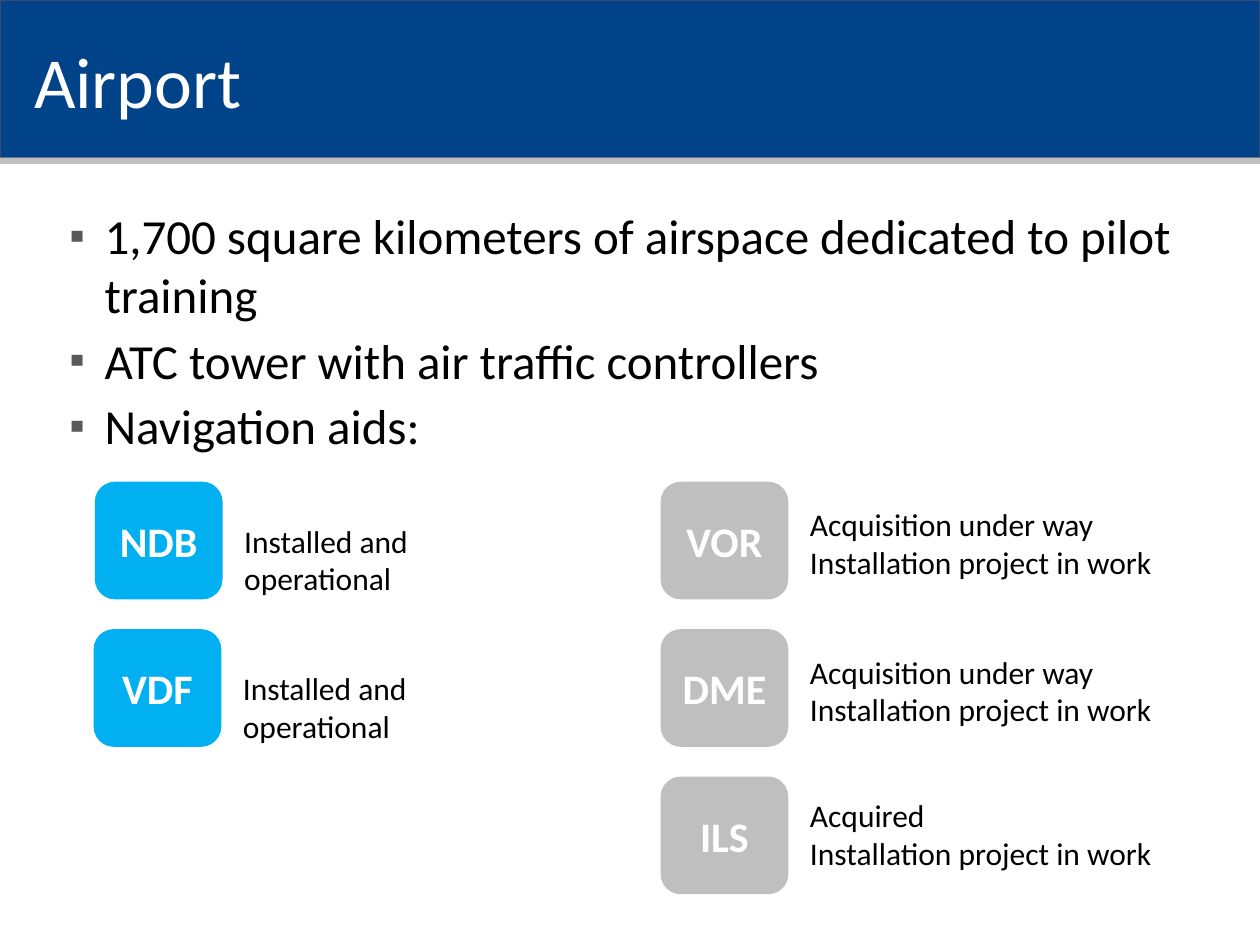
import pptx
import pptx.util
import pptx.dml.color
import pptx.enum.shapes
import pptx.enum.text
import pptx.oxml
import pptx.oxml.ns

Inches, Pt = pptx.util.Inches, pptx.util.Pt
MSO_SHAPE = pptx.enum.shapes.MSO_SHAPE
PP_ALIGN = pptx.enum.text.PP_ALIGN
MSO_ANCHOR = pptx.enum.text.MSO_ANCHOR
NAVY, GRAY, SKY, WHITE, BLACK = "004388", "BFBFBF", "00B0F0", "FFFFFF", "000000"
TILE_W, TILE_H, ROW_TOP, ROW_STEP = 1, 0.92, 3.83, 1.17


def rgb(value):
    """Return the colour for a hex string."""
    return pptx.dml.color.RGBColor.from_string(value)


def place(sp, x, y, w, h):
    """Move a shape to a box given in inches."""
    box = dict(left=x, top=y, width=w, height=h)
    for name, value in box.items():
        setattr(sp, name, Inches(value))


def write(sp, lines, size, color, bold=False, align=PP_ALIGN.LEFT, anchor=MSO_ANCHOR.TOP):
    """Fill a shape with one formatted paragraph per line."""
    tf = sp.text_frame
    frame = dict(word_wrap=True, auto_size=pptx.enum.text.MSO_AUTO_SIZE.NONE,
                 vertical_anchor=anchor, text="\n".join(lines))
    for name, value in frame.items():
        setattr(tf, name, value)
    for p in tf.paragraphs:
        p.alignment = align
        for r in p.runs:
            font = dict(name="Calibri", size=Pt(size), bold=bold)
            for name, value in font.items():
                setattr(r.font, name, value)
            r.font.color.rgb = rgb(color)


def add_block(s, kind, x, y, w, h, fill, line=None):
    """Add a flat filled shape with an optional outline."""
    sp = s.shapes.add_shape(kind, *map(Inches, (x, y, w, h)))
    sp.shadow.inherit = False
    sp.fill.solid()
    sp.fill.fore_color.rgb = rgb(fill)
    if line:
        sp.line.color.rgb = rgb(line)
        sp.line.width = Pt(1)
    else:
        sp.line.fill.background()
    return sp


def add_header(s, x, y, w, h, title):
    """Put the title on a coloured band with a thin rule below."""
    band = add_block(s, MSO_SHAPE.RECTANGLE, x, y, w, h, NAVY, "3F4774")
    rule = add_block(s, MSO_SHAPE.RECTANGLE, x, y + h, w, 0.05, GRAY)
    for i, sp in enumerate((band, rule)):
        s.shapes._spTree.insert(2 + i, sp._element)
    sp = s.shapes.title
    place(sp, x + 0.17, y + 0.17, w - 1, h - 0.33)
    write(sp, [title], 41, WHITE, anchor=MSO_ANCHOR.MIDDLE)


def add_bullets(s, x, y, w, h, lines):
    """Fill the body placeholder with square bullets."""
    sp = s.placeholders[1]
    place(sp, x, y, w, h)
    write(sp, lines, 28, BLACK)
    ns = pptx.oxml.ns.nsdecls("a")
    for i, p in enumerate(sp.text_frame.paragraphs):
        pPr = p._p.get_or_add_pPr()
        pPr.set("marL", str(Inches(0.4)))
        pPr.set("indent", str(Inches(-0.28)))
        for xml in (f'<a:buClr {ns}><a:srgbClr val="595959"/></a:buClr>',
                    f'<a:buSzPct {ns} val="90000"/>',
                    f'<a:buChar {ns} char="▪"/>'):
            pPr.append(pptx.oxml.parse_xml(xml))
        p.space_before = Pt(4 if i else 0)


def add_aid(s, x, y, fill, name, lines, label_dy, label_w):
    """Add a navigation aid tile with its status to the right."""
    sp = add_block(s, MSO_SHAPE.FLOWCHART_ALTERNATE_PROCESS, x, y, TILE_W, TILE_H, fill, fill)
    write(sp, [name], 24, WHITE, True, PP_ALIGN.CENTER, MSO_ANCHOR.MIDDLE)
    label = s.shapes.add_textbox(*map(Inches, (x + 1.08, y + label_dy, label_w, 0.71)))
    write(label, lines, 18, BLACK)


def add_aids(s, x, y, fill, label_w, aids):
    """Stack navigation aids in a column."""
    for i, (name, lines, dx, label_dy) in enumerate(aids):
        add_aid(s, x + dx, y + i * ROW_STEP, fill, name, lines, label_dy, label_w)


def main():
    """Build and save the slide."""
    prs = pptx.Presentation()
    prs.slide_width, prs.slide_height = Inches(10), Inches(7.5)
    s = prs.slides.add_slide(prs.slide_layouts[1])
    add_header(s, 0, 0, 10, 1.25, "Airport")
    add_bullets(s, 0.33, 1.58, 9.33, 2.08, [
        "1,700 square kilometers of airspace dedicated to pilot training",
        "ATC tower with air traffic controllers",
        "Navigation aids:"])
    ready = ["Installed and operational"]
    project = "Installation project in work"
    pending = ["Acquisition under way", project]
    add_aids(s, 0.75, ROW_TOP, SKY, 2.5, [
        ("NDB", ready, 0.01, 0.26), ("VDF", ready, 0, 0.26)])
    add_aids(s, 5.25, ROW_TOP, GRAY, 3.25, [
        ("VOR", pending, 0, 0.13), ("DME", pending, 0, 0.13),
        ("ILS", ["Acquired", project], 0, 0.1)])
    prs.save("out.pptx")


if __name__ == "__main__":
    main()
